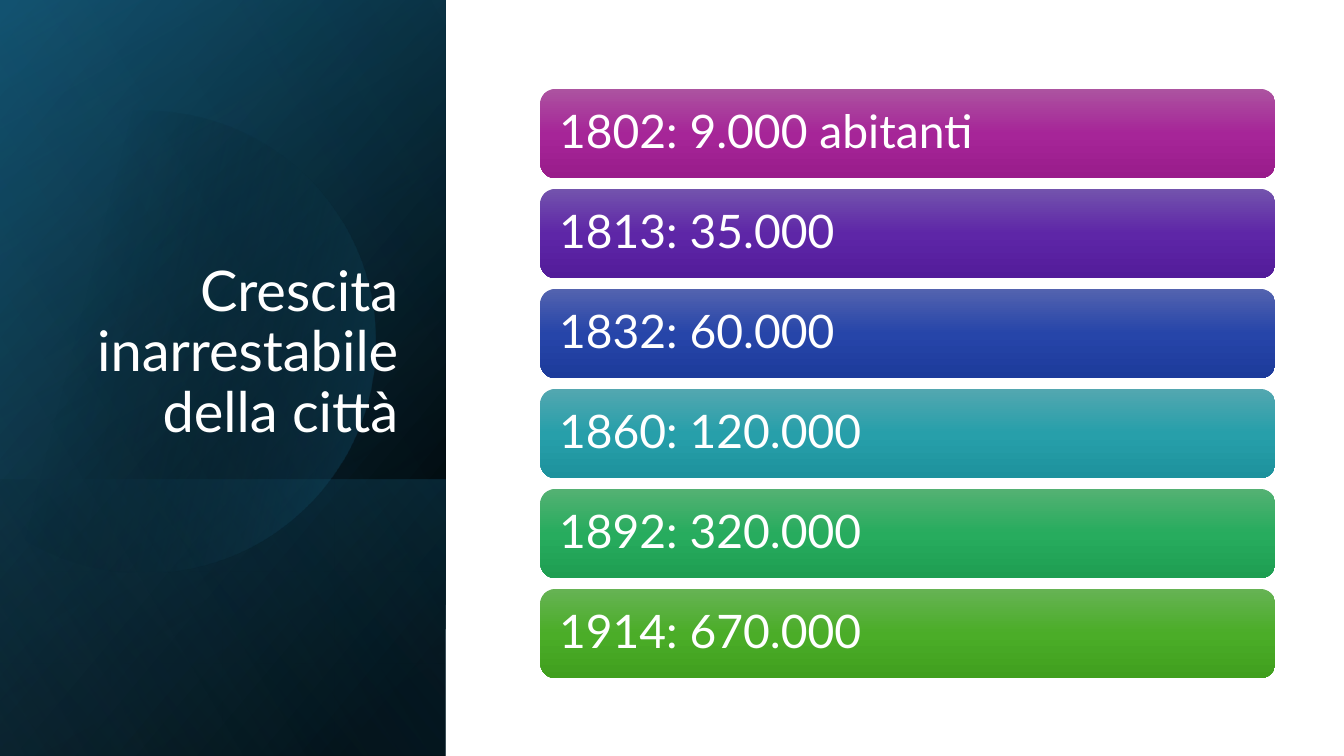
"""Build a slide on the growth of a city's population, with a dark title panel."""
import itertools
import math

import lxml.etree
import pptx
import pptx.dml.color
import pptx.enum.shapes
import pptx.enum.text
import pptx.oxml.ns
import pptx.util
from pptx.oxml.ns import qn
from pptx.util import Cm

FONT = "Lato"
WHITE = "FFFFFF"
TITLE = "Crescita inarrestabile della città"
POPULATION = [
    ("1802: 9.000 abitanti", ("AC53A0", "A62598", "991C8B")),
    ("1813: 35.000", ("7353AD", "5E26A7", "531C9A")),
    ("1832: 60.000", ("5363AF", "2645A9", "1D3B9B")),
    ("1860: 120.000", ("53A7B0", "279FAA", "1D929D")),
    ("1892: 320.000", ("54B173", "27AC5E", "1E9E52")),
    ("1914: 670.000", ("66B354", "4BAD28", "409F1E")),
]

SLIDE_WIDTH, SLIDE_HEIGHT = 33.87, 19.05
PANEL_WIDTH = 11.23
FOOT_HEIGHT = 6.96
BASE_LAYER = (SLIDE_HEIGHT, [(8, "000000", 100), (100, "104862", 100)], 50)
SHADE_LAYER = (SLIDE_HEIGHT, [(0, "000000", 0), (99, "156082", 46)], 30)
FOOT_LAYER = (FOOT_HEIGHT, [(2, "156082", 29), (100, "000000", 30)], 130)
SHEEN_LAYER = (SLIDE_HEIGHT, [(0, "000000", 0), (99, "46B1E1", 11)], 120)

DISC_X, DISC_Y, DISC_RADIUS = 3.63, 8.61, 5.82
DISC_ANGLES = (-134, -90, 0, 90, 134)
DISC_STOPS = [(29, "000000", 0), (100, "156082", 43)]

BAR_LEFT, BAR_TOP, BAR_WIDTH, BAR_HEIGHT, BAR_PITCH = 13.62, 2.24, 18.52, 2.25, 2.52
BAR_INSET = 0.36


def colour(hex_code):
    return pptx.dml.color.RGBColor.from_string(hex_code)


def paint(shape, stops, angle):
    shape.shadow.inherit = False
    shape.line.fill.background()
    shape.fill.background()
    gradient = lxml.etree.Element(qn("a:gradFill"), rotWithShape="1")
    stop_list = lxml.etree.SubElement(gradient, qn("a:gsLst"))
    for position, hex_code, opacity in stops:
        stop = lxml.etree.SubElement(stop_list, qn("a:gs"), pos=str(position * 1000))
        tint = lxml.etree.SubElement(stop, qn("a:srgbClr"), val=str(colour(hex_code)))
        if opacity < 100:
            lxml.etree.SubElement(tint, qn("a:alpha"), val=str(opacity * 1000))
    lxml.etree.SubElement(gradient, qn("a:lin"), ang=str(angle * 60000), scaled="0")
    properties = shape._element.spPr
    properties.replace(properties.find(qn("a:noFill")), gradient)


def write(frame, text, size, align, anchor):
    frame.text = text
    frame.word_wrap = True
    frame.auto_size = pptx.enum.text.MSO_AUTO_SIZE.NONE
    frame.vertical_anchor = anchor
    paragraph = frame.paragraphs[0]
    paragraph.alignment = align
    paragraph.line_spacing = 0.9
    paragraph.font.name = FONT
    paragraph.font.size = pptx.util.Pt(size)
    paragraph.font.color.rgb = colour(WHITE)


def add_layer(shapes, layer):
    height, stops, angle = layer
    left = (PANEL_WIDTH - height) / 2
    top = SLIDE_HEIGHT - height / 2 - PANEL_WIDTH / 2
    panel = shapes.add_shape(pptx.enum.shapes.MSO_SHAPE.RECTANGLE,
                             Cm(left), Cm(top), Cm(height), Cm(PANEL_WIDTH))
    panel.rotation = 90
    panel._element.spPr.get_or_add_xfrm().set("flipH", "1")
    paint(panel, stops, angle)


def rim_point(angle, reach=0):
    cos, sin = math.cos(angle), math.sin(angle)
    return (Cm(DISC_X + DISC_RADIUS * (cos - reach * sin)),
            Cm(DISC_Y + DISC_RADIUS * (sin + reach * cos)))


def add_disc(shapes):
    angles = [math.radians(degrees) for degrees in DISC_ANGLES]
    rim = [rim_point(angle) for angle in angles]
    builder = shapes.build_freeform(*rim[0], scale=1.0)
    builder.add_line_segments(rim[1:], close=True)
    disc = builder.convert_to_shape()
    outline = next(disc._element.iter(qn("a:path")))
    for (start, end), side in zip(itertools.pairwise(angles), outline.findall(qn("a:lnTo"))):
        reach = 4 / 3 * math.tan((end - start) / 4)
        curve = lxml.etree.Element(qn("a:cubicBezTo"))
        for x, y in (rim_point(start, reach), rim_point(end, -reach), rim_point(end)):
            lxml.etree.SubElement(curve, qn("a:pt"), x=str(x - disc.left), y=str(y - disc.top))
        outline.replace(side, curve)
    paint(disc, DISC_STOPS, 14)


def add_bar(shapes, row, text, shades):
    bar = shapes.add_shape(pptx.enum.shapes.MSO_SHAPE.ROUNDED_RECTANGLE,
                           Cm(BAR_LEFT), Cm(BAR_TOP + row * BAR_PITCH),
                           Cm(BAR_WIDTH), Cm(BAR_HEIGHT))
    paint(bar, [(at, shade, 100) for at, shade in zip((0, 50, 100), shades)], 90)
    frame = bar.text_frame
    frame.margin_left = frame.margin_right = Cm(BAR_INSET)
    frame.margin_top = frame.margin_bottom = Cm(BAR_INSET)
    write(frame, text, 33, pptx.enum.text.PP_ALIGN.LEFT, pptx.enum.text.MSO_ANCHOR.MIDDLE)


def main():
    deck = pptx.Presentation()
    deck.slide_width, deck.slide_height = Cm(SLIDE_WIDTH), Cm(SLIDE_HEIGHT)
    slide = deck.slides.add_slide(deck.slide_layouts[5])
    shapes = slide.shapes

    for layer in (BASE_LAYER, SHADE_LAYER, FOOT_LAYER):
        add_layer(shapes, layer)
    add_disc(shapes)
    add_layer(shapes, SHEEN_LAYER)

    title = shapes.title
    title.left, title.top, title.width, title.height = Cm(1.63), Cm(4.67), Cm(8.66), Cm(6.65)
    write(title.text_frame, TITLE, 40, pptx.enum.text.PP_ALIGN.RIGHT,
          pptx.enum.text.MSO_ANCHOR.BOTTOM)
    title._element.getparent().append(title._element)

    for row, (text, shades) in enumerate(POPULATION):
        add_bar(shapes, row, text, shades)
    deck.save("out.pptx")


if __name__ == "__main__":
    main()
